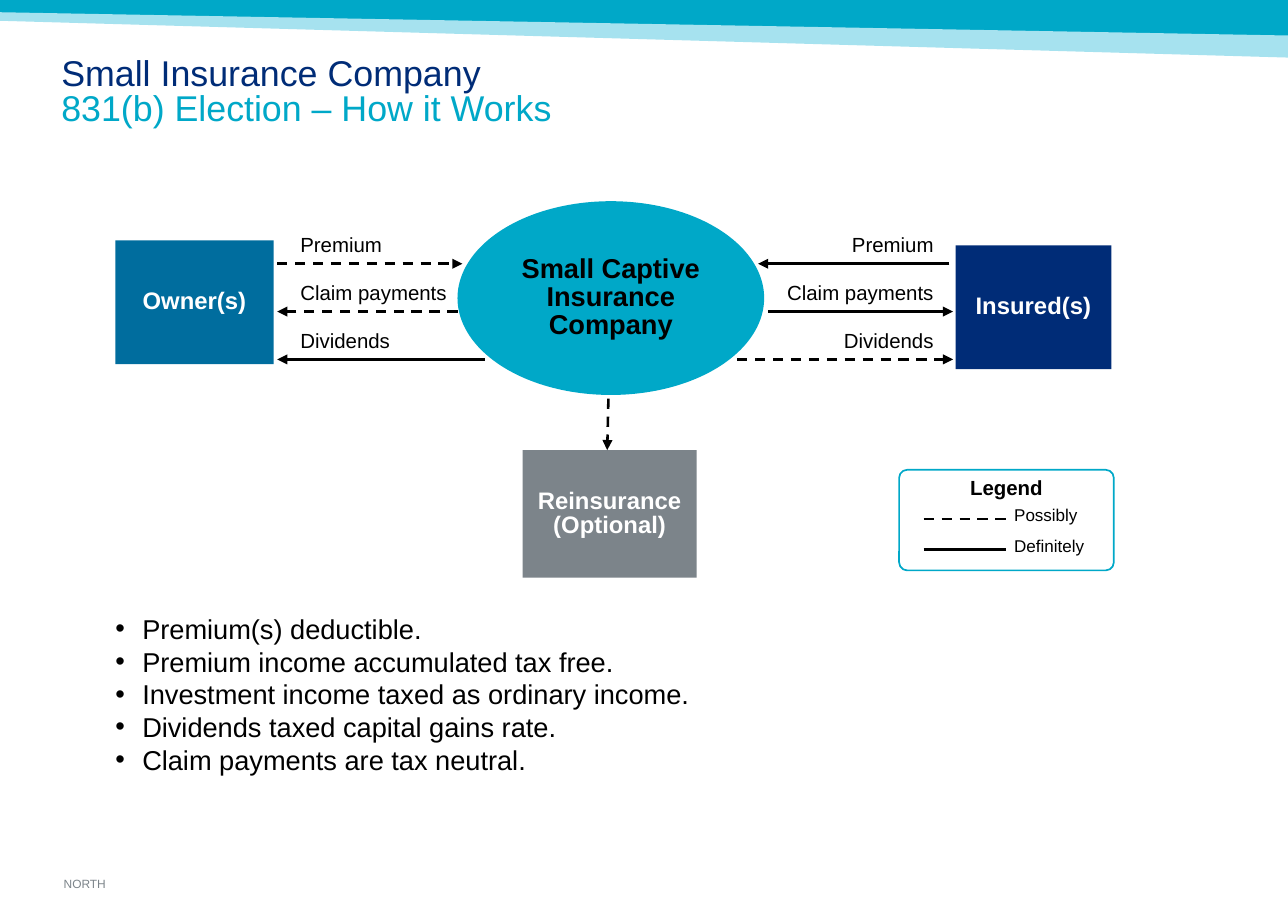
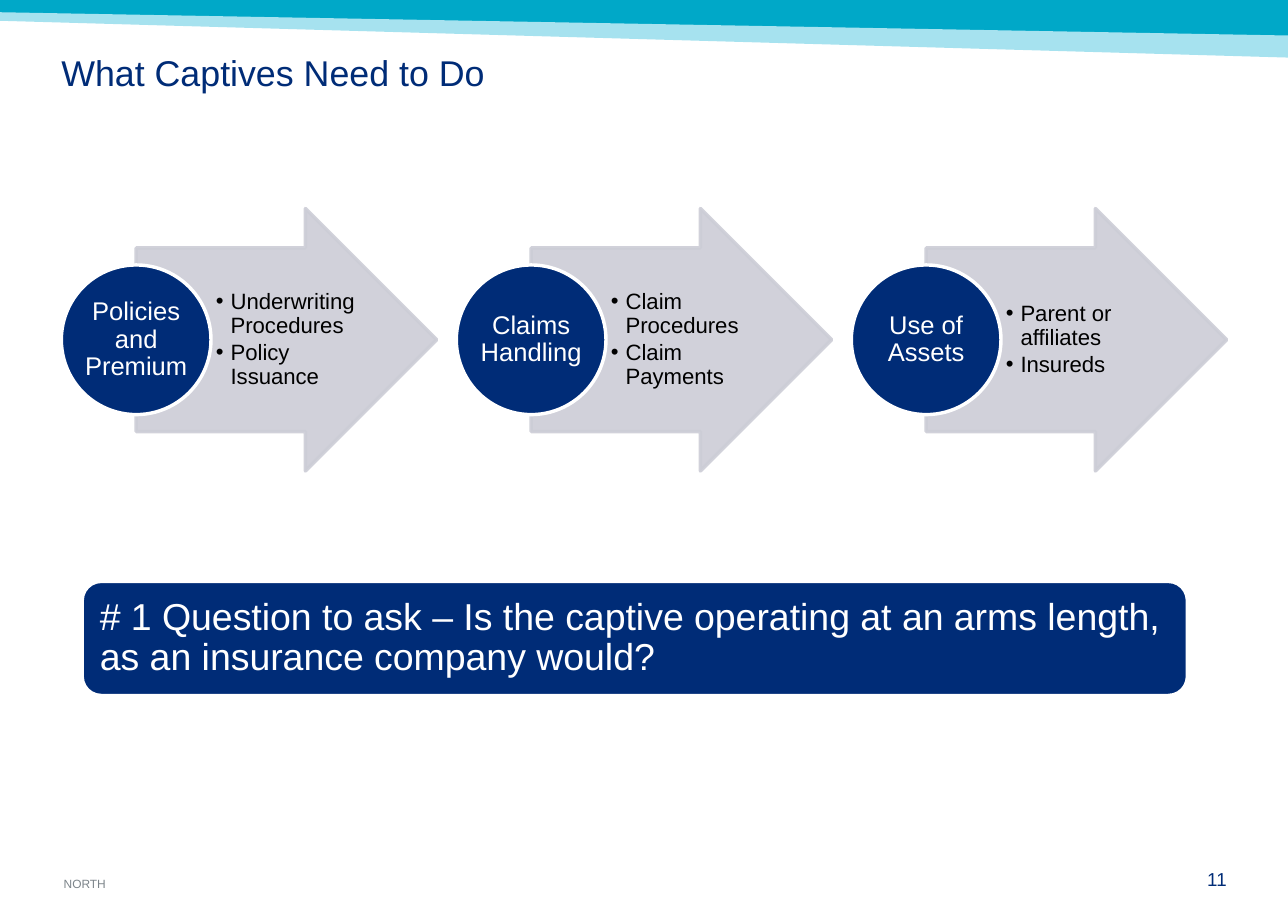
from dataclasses import dataclass

from lxml import etree
from pptx import Presentation
from pptx.dml.color import RGBColor
from pptx.enum.dml import MSO_LINE
from pptx.enum.shapes import MSO_CONNECTOR, MSO_SHAPE
from pptx.enum.text import MSO_ANCHOR, PP_ALIGN
from pptx.oxml.ns import qn
from pptx.util import Inches, Pt

RECTANGLE, ELLIPSE = MSO_SHAPE.RECTANGLE, MSO_SHAPE.OVAL
ROUNDED, ARROW = MSO_SHAPE.ROUNDED_RECTANGLE, MSO_SHAPE.RIGHT_ARROW
LEFT, CENTER, RIGHT = PP_ALIGN.LEFT, PP_ALIGN.CENTER, PP_ALIGN.RIGHT
TOP, MIDDLE, BOTTOM = MSO_ANCHOR.TOP, MSO_ANCHOR.MIDDLE, MSO_ANCHOR.BOTTOM


@dataclass(frozen=True)
class Theme:
    font: str = "Arial"
    navy: str = "002C77"
    teal: str = "00A8C8"
    pale_teal: str = "A6E2EF"
    blue: str = "006D9E"
    gray: str = "7C848A"
    silver: str = "CCCDD6"
    black: str = "000000"
    white: str = "FFFFFF"
    title_size: int = 21
    question_size: int = 22
    body_size: int = 16
    circle_size: int = 15
    box_size: int = 14
    detail_size: int = 13
    label_size: int = 12
    page_size: int = 11
    legend_size: int = 10
    footer_size: int = 7


THEME = Theme()
WIDTH, HEIGHT = 10.5, 7.5
MARGIN = 0.5
CONTENT_WIDTH = WIDTH - 2 * MARGIN
NO_INSETS = (0, 0, 0, 0)
TIGHT = 0.86

FOOTER = "NORTH"
BANDS = [
    (THEME.teal, [(0, 0), (WIDTH, 0), (WIDTH, 0.32), (0, 0.12)]),
    (THEME.pale_teal, [(0, 0.1), (WIDTH, 0.29), (WIDTH, 0.47), (0, 0.17)]),
]

ELECTION_TITLE = ["Small Insurance Company", "831(b) Election – How it Works"]
# shape, position and size, fill, text, text colour, text size
PARTIES = [
    (RECTANGLE, (0.94, 1.96, 1.29, 1.01), THEME.blue, "Owner(s)", THEME.white, THEME.box_size),
    (ELLIPSE, (3.73, 1.64, 2.5, 1.58), THEME.teal, "Small Captive Insurance Company",
     THEME.black, THEME.body_size),
    (RECTANGLE, (7.79, 2, 1.27, 1.01), THEME.navy, "Insured(s)", THEME.white, THEME.box_size),
    (RECTANGLE, (4.26, 3.67, 1.42, 1.04), THEME.gray, "Reinsurance (Optional)",
     THEME.white, THEME.box_size),
]
# label, then (from x, to x, dashed) on the owner side and on the insured side
FLOWS = [
    ("Premium", (2.26, 3.77, True), (7.74, 6.18, False)),
    ("Claim payments", (3.73, 2.26, True), (6.26, 7.77, False)),
    ("Dividends", (3.95, 2.26, False), (6.01, 7.77, True)),
]
LEGEND = [("Possibly", True), ("Definitely", False)]
TAX_POINTS = [
    "Premium(s) deductible.",
    "Premium income accumulated tax free.",
    "Investment income taxed as ordinary income.",
    "Dividends taxed capital gains rate.",
    "Claim payments are tax neutral.",
]

DUTIES_TITLE = ["What Captives Need to Do"]
DUTIES = [
    ("Policies and Premium", ["Underwriting Procedures", "Policy Issuance"]),
    ("Claims Handling", ["Claim Procedures", "Claim Payments"]),
    ("Use of Assets", ["Parent or affiliates", "Insureds"]),
]
QUESTION = ("# 1 Question to ask – Is the captive operating at an arms length, "
            "as an insurance company would?")


def rgb(colour):
    return RGBColor.from_string(colour)


def add_bullet(paragraph, indent):
    properties = paragraph._p.get_or_add_pPr()
    properties.set("marL", str(Inches(indent)))
    properties.set("indent", str(-Inches(indent)))
    etree.SubElement(properties, qn("a:buFont")).set("typeface", THEME.font)
    etree.SubElement(properties, qn("a:buChar")).set("char", "•")


def write_text(shape, lines, size, colour, bold=False, align=LEFT, anchor=TOP,
               insets=(0.1, 0.05, 0.1, 0.05), spacing=1.0, after=0, bullet_indent=0):
    """Fill a shape with one paragraph per line; insets run left, top, right, bottom."""
    frame = shape.text_frame
    frame.text = "\n".join(lines)
    frame.word_wrap = True
    frame.vertical_anchor = anchor
    frame.margin_left, frame.margin_top, frame.margin_right, frame.margin_bottom = map(
        Inches, insets)
    for paragraph in frame.paragraphs:
        paragraph.alignment = align
        paragraph.line_spacing = spacing
        paragraph.space_after = Pt(after)
        if bullet_indent:
            add_bullet(paragraph, bullet_indent)
        for run in paragraph.runs:
            run.font.name = THEME.font
            run.font.size = Pt(size)
            run.font.bold = bold
            run.font.color.rgb = rgb(colour)


def add_text(slide, box, lines, size, colour, **style):
    shape = slide.shapes.add_textbox(*map(Inches, box))
    write_text(shape, lines, size, colour, **style)
    return shape


def paint(shape, fill, line=None, line_width=1):
    shape.shadow.inherit = False
    shape.fill.solid()
    shape.fill.fore_color.rgb = rgb(fill)
    if line:
        shape.line.color.rgb = rgb(line)
        shape.line.width = Pt(line_width)
    else:
        shape.line.fill.background()


def add_shape(slide, kind, box, fill, line=None, line_width=1, adjustments=()):
    shape = slide.shapes.add_shape(kind, *map(Inches, box))
    for index, value in enumerate(adjustments):
        shape.adjustments[index] = value
    paint(shape, fill, line, line_width)
    return shape


def set_opacity(shape, percent):
    for colour in shape.element.spPr.iter(qn("a:srgbClr")):
        etree.SubElement(colour, qn("a:alpha")).set("val", str(percent * 1000))


def add_line(slide, start, end, dashed, arrow=True):
    connector = slide.shapes.add_connector(MSO_CONNECTOR.STRAIGHT, *map(Inches, start + end))
    connector.line.color.rgb = rgb(THEME.black)
    connector.line.width = Pt(1.5)
    if dashed:
        connector.line.dash_style = MSO_LINE.DASH
    properties = connector.element.spPr
    if arrow:
        outline = properties.find(qn("a:ln"))
        etree.SubElement(outline, qn("a:tailEnd")).set("type", "triangle")
    etree.SubElement(properties, qn("a:effectLst"))


def add_slide(presentation, title_lines):
    """Add a blank slide with the bands, footer and title that all slides share."""
    slide = presentation.slides.add_slide(presentation.slide_layouts[6])
    for colour, points in BANDS:
        first, *others = [(Inches(x), Inches(y)) for x, y in points]
        builder = slide.shapes.build_freeform(*first)
        builder.add_line_segments(others)
        paint(builder.convert_to_shape(), colour)
    add_text(slide, (0.52, 7.13, 3.16, 0.13), [FOOTER], THEME.footer_size, THEME.gray,
             anchor=BOTTOM, insets=NO_INSETS)
    title = add_text(slide, (MARGIN, 0.42, CONTENT_WIDTH, 0.76), ["\v".join(title_lines)],
                     THEME.title_size, THEME.navy, insets=(0, 0.05, 0.1, 0.05), spacing=0.83)
    for run in title.text_frame.paragraphs[0].runs[1:]:
        run.font.color.rgb = rgb(THEME.teal)
    return slide


def add_legend(slide):
    left, top = 7.33, 3.83
    frame = add_shape(slide, ROUNDED, (left, top, 1.75, 0.82), THEME.white, THEME.teal,
                      adjustments=[0.08])
    write_text(frame, ["Legend"], THEME.label_size, THEME.black, bold=True, align=CENTER,
               spacing=TIGHT)
    for row, (label, dashed) in enumerate(LEGEND):
        y = top + 0.4 + 0.25 * row
        add_line(slide, (left + 0.2, y), (left + 0.87, y), dashed, arrow=False)
        add_text(slide, (left + 0.84, y - 0.14, 0.9, 0.25), [label], THEME.legend_size,
                 THEME.black, spacing=TIGHT)


def add_election_slide(presentation):
    slide = add_slide(presentation, ELECTION_TITLE)
    add_text(slide, (0.94, 4.99, 5.23, 1.66), TAX_POINTS, THEME.body_size, THEME.black,
             insets=NO_INSETS, bullet_indent=0.22)
    for kind, box, fill, text, colour, size in PARTIES:
        write_text(add_shape(slide, kind, box, fill), [text], size, colour, bold=True,
                   align=CENTER, anchor=MIDDLE, spacing=TIGHT)
    label_width = 1.45
    sides = [(2.35, LEFT), (7.71 - label_width, RIGHT)]
    for row, (label, *arrows) in enumerate(FLOWS):
        y = 2.15 + 0.39 * row
        for (label_left, align), (start, end, dashed) in zip(sides, arrows):
            add_text(slide, (label_left, y - 0.28, label_width, 0.27), [label],
                     THEME.label_size, THEME.black, align=align, spacing=TIGHT)
            add_line(slide, (start, y), (end, y), dashed)
    add_line(slide, (4.96, 3.25), (4.95, 3.67), dashed=True)
    add_legend(slide)


def add_duties_slide(presentation):
    slide = add_slide(presentation, DUTIES_TITLE)
    middle, diameter = 2.77, 1.22
    arrow_width, arrow_height = 2.45, 2.14
    detail_width, detail_height = 1.24, 1.5
    pitch = (CONTENT_WIDTH - diameter / 2 - arrow_width) / (len(DUTIES) - 1)
    for column, (duty, details) in enumerate(DUTIES):
        left = MARGIN + column * pitch
        arrow = add_shape(
            slide, ARROW,
            (left + diameter / 2, middle - arrow_height / 2, arrow_width, arrow_height),
            THEME.silver, THEME.silver, 2, adjustments=[0.7, 0.5])
        set_opacity(arrow, 90)
        add_text(slide,
                 (left + diameter, middle - detail_height / 2, detail_width, detail_height),
                 details, THEME.detail_size, THEME.black, anchor=MIDDLE,
                 insets=(0.04, 0.01, 0.02, 0.01), spacing=0.9, after=2, bullet_indent=0.12)
        circle = add_shape(slide, ELLIPSE, (left, middle - diameter / 2, diameter, diameter),
                           THEME.navy, THEME.white, 2)
        write_text(circle, [duty], THEME.circle_size, THEME.white, align=CENTER,
                   anchor=MIDDLE, insets=(0.01,) * 4, spacing=0.9)
    banner = add_shape(slide, ROUNDED, (0.67, 4.74, 9.01, 0.93), THEME.navy, THEME.white, 2)
    write_text(banner, [QUESTION], THEME.question_size, THEME.white, anchor=MIDDLE,
               insets=(0.1, 0.09, 0.1, 0.09), spacing=0.9)
    add_text(slide, (9.51, 7.07, 0.49, 0.18), ["11"], THEME.page_size, THEME.navy,
             align=RIGHT, insets=NO_INSETS)


def main():
    presentation = Presentation()
    presentation.slide_width, presentation.slide_height = Inches(WIDTH), Inches(HEIGHT)
    add_election_slide(presentation)
    add_duties_slide(presentation)
    presentation.save("out.pptx")


if __name__ == "__main__":
    main()
